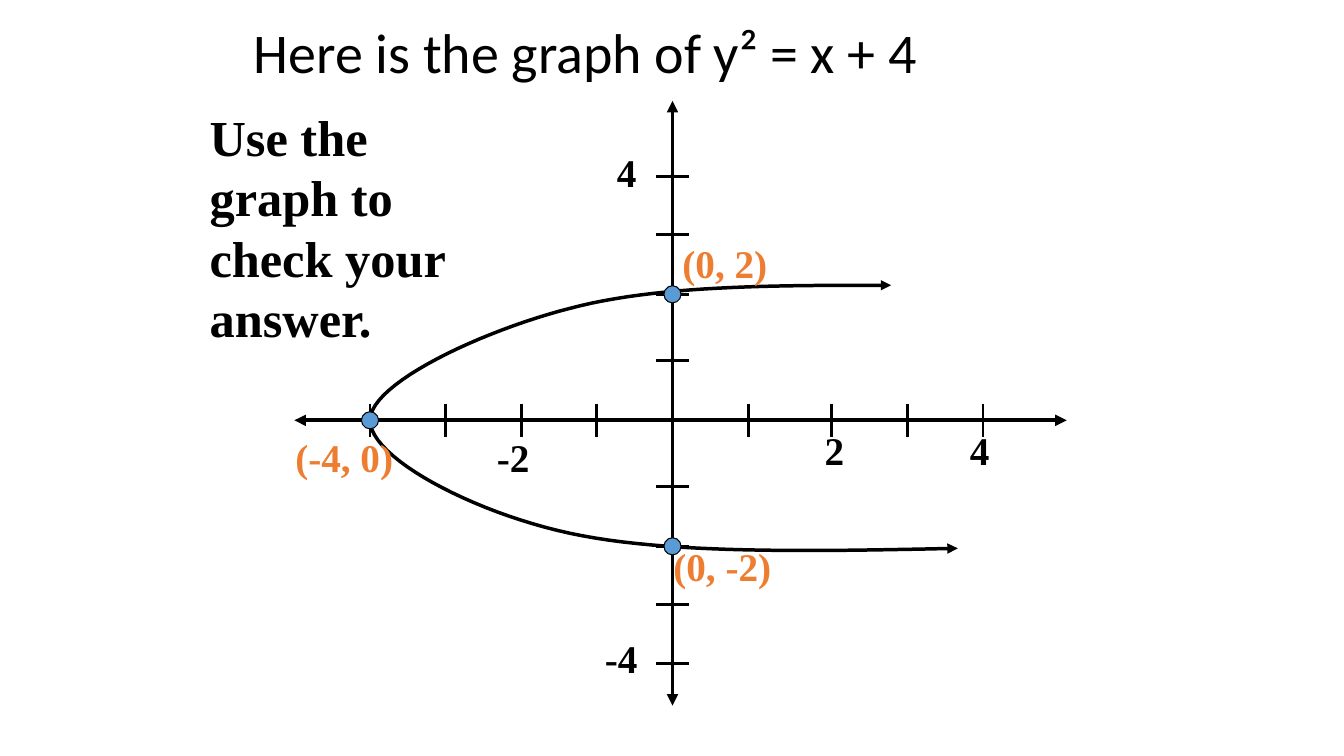
import pptx
import pptx.util
import pptx.dml.color
import pptx.enum.shapes
import pptx.enum.text
import pptx.oxml.ns
from pptx.util import Inches

COLORS = {"ink": "000000", "point": "5B9BD5", "coords": "ED7D31"}
SERIF = "Times New Roman"

TITLE = ("Here is the graph of y² = x + 4", (2.42, -0.08, 8.5, 1.25))
HINT = ("Use the graph to check your answer.", (1.98, 1, 2.85, 2.5))
AXIS_LABELS = [
    ("-4", (5.9, 6.24, 0.53, 0.57)),
    ("-2", (4.83, 4.25, 0.53, 0.57)),
    ("4", (6.02, 1.42, 0.4, 0.57)),
    ("2", (8.08, 4.18, 0.4, 0.57)),
    ("4", (9.52, 4.18, 0.4, 0.57)),
]
POINT_LABELS = [
    ("(-4, 0)", (2.83, 4.25, 1.18, 0.57)),
    ("(0, 2)", (6.67, 2.33, 1.05, 0.57)),
    ("(0, -2)", (6.58, 5.33, 1.18, 0.57)),
]
ORIGIN_X, ORIGIN_Y = 6.67, 4.17
Y_AXIS = (ORIGIN_X, 1, ORIGIN_X, 7)
X_AXIS = (10.58, ORIGIN_Y, 2.92, ORIGIN_Y)
X_TICKS = [3.67, 4.42, 5.17, 5.92, 7.42, 8.25, 9, 9.75]
Y_TICKS = [1.75, 2.33, 2.92, 3.58, 4.83, 5.42, 6, 6.58]
HALF_TICK = 0.165
POINTS = [(3.67, 4.17), (6.67, 2.92), (6.67, 5.42)]
POINT_SIZE = 0.17
CURVE_START = (8.84, 2.83)
CURVE = [  # two control points and an end point per Bézier segment
    ((7.67, 2.83), (6.51, 2.83), (5.65, 3.06)),
    ((4.79, 3.28), (3.67, 3.8), (3.67, 4.17)),
    ((3.67, 4.54), (4.68, 5.08), (5.65, 5.29)),
    ((6.62, 5.5), (8.06, 5.47), (9.5, 5.44)),
]
STEPS = 24


def rgb(name):
    return pptx.dml.color.RGBColor.from_string(COLORS[name])


def add_text(text, box, size=28, font=SERIF, color="ink", bold=True,
             wrap=False, spacing=None, anchor="TOP"):
    tf = slide.shapes.add_textbox(*map(Inches, box)).text_frame
    tf.word_wrap = wrap
    tf.vertical_anchor = pptx.enum.text.MSO_ANCHOR[anchor]
    p = tf.paragraphs[0]
    p.line_spacing = spacing
    r = p.add_run()
    r.text = text
    r.font.size = pptx.util.Pt(size)
    r.font.name = font
    r.font.bold = bold
    r.font.color.rgb = rgb(color)


def style_line(sp, width, arrows=False):
    sp.line.color.rgb = rgb("ink")
    sp.line.width = pptx.util.Pt(width)
    if arrows:
        ln = sp._element.spPr.find(pptx.oxml.ns.qn("a:ln"))
        for end in ("a:headEnd", "a:tailEnd"):
            ln.append(ln.makeelement(pptx.oxml.ns.qn(end), {"type": "triangle"}))


def add_line(x1, y1, x2, y2, width=2, arrows=False):
    straight = pptx.enum.shapes.MSO_CONNECTOR.STRAIGHT
    sp = slide.shapes.add_connector(straight, *map(Inches, (x1, y1, x2, y2)))
    style_line(sp, width, arrows)
    sp._element.spPr.append(sp._element.makeelement(pptx.oxml.ns.qn("a:effectLst"), {}))


def curve_points():
    """Sample the Bézier segments after the start point."""
    start = CURVE_START
    for c1, c2, end in CURVE:
        for step in range(1, STEPS + 1):
            t = step / STEPS
            u = 1 - t
            yield tuple(Inches(u**3 * a + 3 * u * u * t * b + 3 * u * t * t * c + t**3 * d)
                        for a, b, c, d in zip(start, c1, c2, end))
        start = end


def add_curve():
    builder = slide.shapes.build_freeform(*map(Inches, CURVE_START))
    builder.add_line_segments(list(curve_points()), close=False)
    sp = builder.convert_to_shape()
    sp.shadow.inherit = False
    sp.fill.background()
    style_line(sp, 2.5, arrows=True)


def add_point(x, y):
    half = POINT_SIZE / 2
    sp = slide.shapes.add_shape(pptx.enum.shapes.MSO_SHAPE.OVAL, Inches(x - half),
                                Inches(y - half), Inches(POINT_SIZE), Inches(POINT_SIZE))
    sp.shadow.inherit = False
    sp.fill.solid()
    sp.fill.fore_color.rgb = rgb("point")
    style_line(sp, 0.75)


prs = pptx.Presentation()
prs.slide_width, prs.slide_height = Inches(13.33), Inches(7.5)
slide = prs.slides.add_slide(prs.slide_layouts[6])

add_text(*TITLE, size=40, font="Calibri", bold=False, wrap=True, spacing=0.9, anchor="MIDDLE")
for axis in (Y_AXIS, X_AXIS):
    add_line(*axis, width=2.75, arrows=True)
for x in X_TICKS:
    add_line(x, ORIGIN_Y - HALF_TICK, x, ORIGIN_Y + HALF_TICK)
for y in Y_TICKS:
    add_line(ORIGIN_X - HALF_TICK, y, ORIGIN_X + HALF_TICK, y)
for text, box in AXIS_LABELS:
    add_text(text, box)
add_curve()
for x, y in POINTS:
    add_point(x, y)
for text, box in POINT_LABELS:
    add_text(text, box, color="coords")
add_text(*HINT, size=36, wrap=True)

prs.save("out.pptx")
